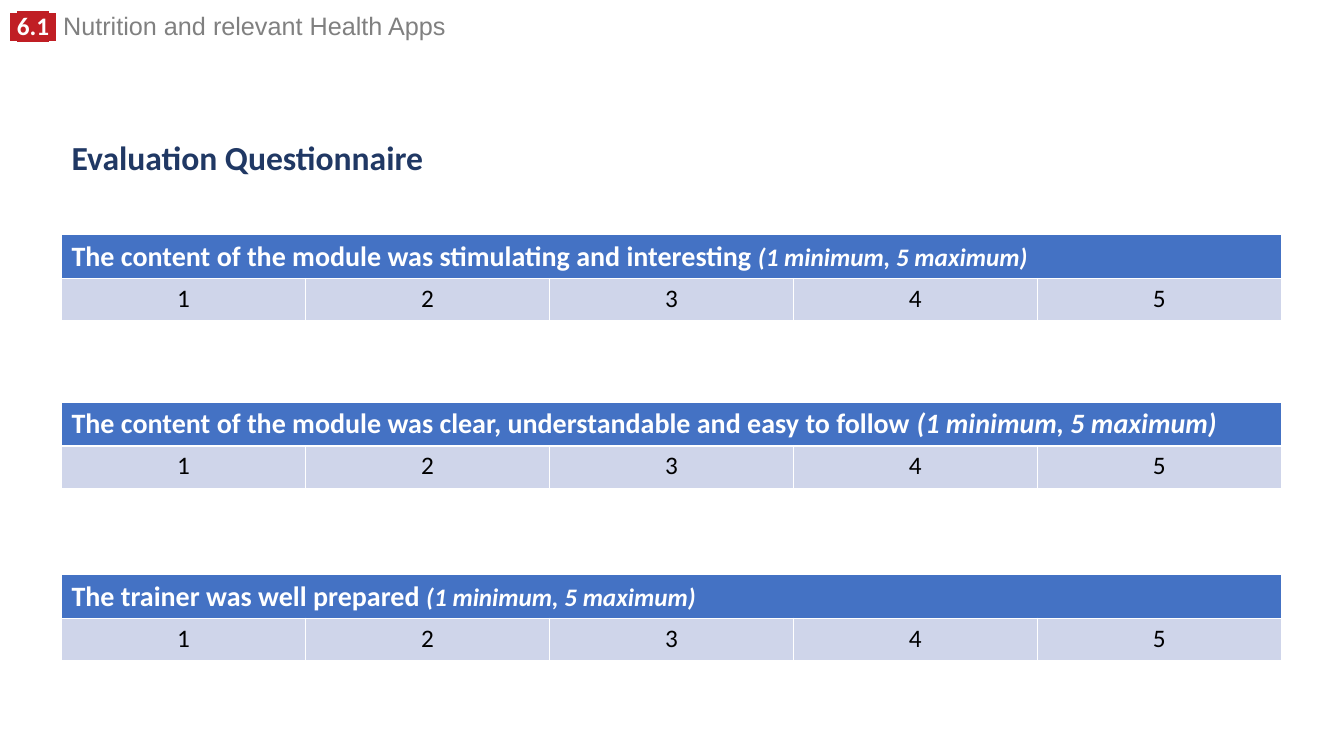
from lxml.etree import SubElement
from pptx import Presentation
from pptx.dml.color import RGBColor
from pptx.enum.text import MSO_ANCHOR, MSO_AUTO_SIZE, PP_ALIGN
from pptx.oxml.ns import qn
from pptx.util import Inches, Pt

WHITE, NAVY, GREY, RED = "FFFFFF", "203864", "808080", "C01E24"
HEADER_BLUE, SCALE_BLUE = "4472C4", "CFD5EA"
LEFT, WIDTH, ROW_HEIGHT = 0.61, 12.1, 0.42
SCALE = 5


def add_run(paragraph, text, size, color, bold=False, italic=False,
            font="Calibri", highlight=None):
    run = paragraph.add_run()
    run.text = text
    run.font.size = Pt(size)
    run.font.bold = bold
    run.font.italic = italic
    run.font.color.rgb = RGBColor.from_string(color)
    if highlight:
        mark = SubElement(run.font._element, qn("a:highlight"))
        SubElement(mark, qn("a:srgbClr"), val=highlight)
    run.font.name = font


def fill_cell(cell, color):
    cell.fill.solid()
    cell.fill.fore_color.rgb = RGBColor.from_string(color)


prs = Presentation()
prs.slide_width, prs.slide_height = Inches(13.33), Inches(7.5)
slide = prs.slides.add_slide(prs.slide_layouts[5])

# Module heading
module = slide.shapes.add_textbox(Inches(0), Inches(0.11), Inches(9.52), Inches(0.35))
module.text_frame.word_wrap = True
heading = module.text_frame.paragraphs[0]
heading.line_spacing = 0.8
for text, font in ((" ", "Arial"), ("6.1", "Calibri"), (" ", "Arial")):
    add_run(heading, text, 18, WHITE, bold=True, font=font, highlight=RED)
add_run(heading, " Nutrition and relevant Health Apps", 18, GREY, font="Arial")

# Title
title = slide.shapes.title
title.left, title.top = Inches(LEFT), Inches(1.18)
title.width, title.height = Inches(WIDTH), Inches(0.8)
title.text_frame.auto_size = MSO_AUTO_SIZE.NONE
title.text_frame.vertical_anchor = MSO_ANCHOR.MIDDLE
title_line = title.text_frame.paragraphs[0]
title_line.alignment = PP_ALIGN.LEFT
title_line.line_spacing = 0.9
add_run(title_line, "Evaluation Questionnaire", 24, NAVY, bold=True)

# Questions: top, statement, size of the scale hint
questions = [
    (2.33, "The content of the module was stimulating and interesting ", 18),
    (3.99, "The content of the module was clear, understandable and easy to follow ", 20),
    (5.7, "The trainer was well prepared ", 18),
]
for top, statement, hint_size in questions:
    table = slide.shapes.add_table(
        2, SCALE, Inches(LEFT), Inches(top), Inches(WIDTH), Inches(2 * ROW_HEIGHT)).table
    table.cell(0, 0).merge(table.cell(0, SCALE - 1))
    question = table.cell(0, 0)
    fill_cell(question, HEADER_BLUE)
    question_line = question.text_frame.paragraphs[0]
    add_run(question_line, statement, 20, WHITE, bold=True)
    add_run(question_line, "(1 minimum, 5 maximum)", hint_size, WHITE, bold=True, italic=True)
    for column in range(SCALE):
        score = table.cell(1, column)
        fill_cell(score, SCALE_BLUE)
        score_line = score.text_frame.paragraphs[0]
        score_line.alignment = PP_ALIGN.CENTER
        add_run(score_line, str(column + 1), 18, "000000")

prs.save("out.pptx")
